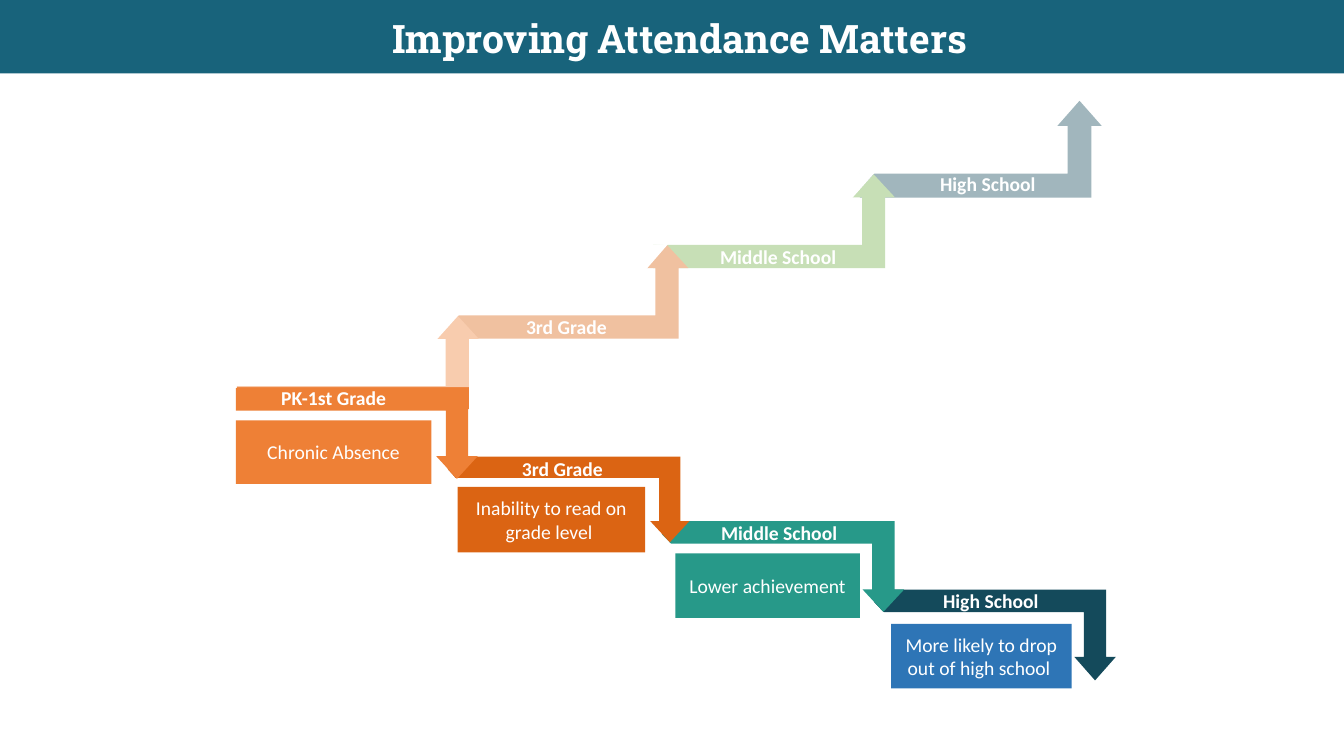
from collections import namedtuple

from lxml import etree
from pptx import Presentation
from pptx.dml.color import RGBColor
from pptx.enum.shapes import MSO_SHAPE
from pptx.enum.text import MSO_ANCHOR, MSO_AUTO_SIZE, PP_ALIGN
from pptx.oxml.ns import qn
from pptx.util import Inches, Pt

RECT = MSO_SHAPE.RECTANGLE
BENT_ARROW = MSO_SHAPE.BENT_UP_ARROW
CORNER = MSO_SHAPE.RIGHT_TRIANGLE
CENTER = PP_ALIGN.CENTER
MIDDLE = MSO_ANCHOR.MIDDLE
TOP = MSO_ANCHOR.TOP
GROW = MSO_AUTO_SIZE.SHAPE_TO_FIT_TEXT
FIXED = MSO_AUTO_SIZE.NONE

WHITE = RGBColor(0xFF, 0xFF, 0xFF)
BAND_BLUE = RGBColor(0x18, 0x63, 0x7B)
ORANGE = RGBColor(0xEE, 0x80, 0x36)
RUST = RGBColor(0xDB, 0x64, 0x13)
GREEN = RGBColor(0x73, 0xB1, 0x49)
TEAL = RGBColor(0x27, 0x99, 0x89)
NAVY = RGBColor(0x14, 0x4A, 0x5B)
BLUE = RGBColor(0x2E, 0x75, 0xB6)

# The slide is a grid of square cells, a tenth of an inch each
CELL = Inches(0.1)
COLUMNS, ROWS = 133.33, 75
ARROW_COLUMNS = 24
LABEL_COLUMNS, LABEL_ROWS = 14.4, 3.4

LABEL_FONT = {"name": "Calibri", "size": Pt(14), "bold": True}
OUTCOME_FONT = {"name": "Calibri", "size": Pt(14), "bold": False}
TITLE_FONT = {"name": "Roboto Slab", "size": Pt(28), "bold": True}

# Places are (column, row, columns, rows); cut is a white corner at the arrow tip
Step = namedtuple("Step", "grade color column row rows head label cut turn")
Outcome = namedtuple("Outcome", "text color place")

CLIMB = [
    Step("High School", NAVY, 85.3, 10, 9.6, 0.26, (90.8, 16.6), None, 0),
    Step("Middle School", GREEN, 64.8, 17.3, 9.3, 0.247, (70, 23.8),
         (83.6, 17.1, 3.3, 3.5), 85),
    Step("3rd Grade", RUST, 44.3, 24.3, 9.3, 0.248, (49, 30.8),
         (63.4, 24.3, 3, 3), 86),
    # This step shares its label with the first step down
    Step("", ORANGE, 23.5, 31.3, 9.3, 0.25, None, (42.8, 31.3, 3, 2.6), 91),
]
HIGH_DOWN, MIDDLE_DOWN, THIRD_DOWN, FIRST_DOWN = DESCENT = [
    (Step("High School", NAVY, 86.7, 58.5, 9, 0.26, (91.1, 57.9), None, 0),
     Outcome("More likely to drop out of high school ", BLUE,
             (88.4, 61.9, 17.9, 6.4))),
    (Step("Middle School", TEAL, 65.7, 51.7, 9, 0.247, (70.1, 51.2),
          (85.4, 58.3, 3.2, 3.5), 359),
     Outcome("Lower achievement", TEAL, (67, 54.9, 18.3, 6.4))),
    (Step("3rd Grade", RUST, 44.4, 45.3, 8.5, 0.248, (48.6, 44.8),
          (64.1, 51.5, 2.9, 2.8), 2),
     Outcome("Inability to read on grade level ", RUST,
             (45.4, 48.3, 18.6, 6.5))),
    (Step("PK-1st Grade", ORANGE, 23.4, 38.5, 9, 0.25, (25.9, 37.8),
          (42.9, 45.2, 2.9, 2.6), 6.4),
     Outcome("Chronic Absence", ORANGE, (23.4, 41.7, 19.4, 6.3))),
]


def on_grid(place):
    return [round(CELL * cells) for cells in place]


def add_block(shapes, kind, place, color, opacity=None):
    block = shapes.add_shape(kind, *on_grid(place))
    block.shadow.inherit = False
    block.fill.solid()
    block.fill.fore_color.rgb = color
    block.line.fill.background()
    if opacity is not None:
        tint = block.fill._xPr.find(qn("a:solidFill"))[0]
        etree.SubElement(tint, qn("a:alpha"), val=str(opacity * 1000))
    return block


def write(holder, text, font_format, anchor, auto_size):
    frame = holder.text_frame
    frame_format = {"word_wrap": True, "auto_size": auto_size,
                    "vertical_anchor": anchor}
    for key, value in frame_format.items():
        setattr(frame, key, value)
    paragraph = frame.paragraphs[0]
    paragraph.alignment = CENTER
    run = paragraph.add_run()
    run.text = text
    for key, value in font_format.items():
        setattr(run.font, key, value)
    run.font.color.rgb = WHITE


def add_text(shapes, place, text, font_format):
    write(shapes.add_textbox(*on_grid(place)), text, font_format, TOP, GROW)


def add_arrow(shapes, step, downward=False):
    place = (step.column, step.row, ARROW_COLUMNS, step.rows)
    arrow = add_block(shapes, BENT_ARROW, place, step.color)
    for index, share in enumerate((0.247, 0.229, step.head)):
        arrow.adjustments[index] = share
    if downward:
        arrow.rotation = 180
        arrow._element.spPr.xfrm.set("flipH", "1")


def add_cut(shapes, step):
    if step.cut:
        add_block(shapes, CORNER, step.cut, WHITE).rotation = step.turn


def add_label(shapes, step):
    if step.label:
        place = (*step.label, LABEL_COLUMNS, LABEL_ROWS)
        add_text(shapes, place, step.grade, LABEL_FONT)


def add_step_down(slide, step, outcome):
    shapes = slide.shapes.add_group_shape().shapes
    add_cut(shapes, step)
    add_arrow(shapes, step, downward=True)
    box = add_block(shapes, RECT, outcome.place, outcome.color)
    write(box, outcome.text, OUTCOME_FONT, MIDDLE, FIXED)
    add_label(shapes, step)


def add_climb(slide):
    shapes = slide.shapes.add_group_shape().shapes
    for add_part in (add_arrow, add_cut, add_label):
        for step in CLIMB:
            add_part(shapes, step)


def main():
    deck = Presentation()
    deck.slide_width, deck.slide_height = on_grid((COLUMNS, ROWS))
    slide = deck.slides.add_slide(deck.slide_layouts[6])

    # Title band
    add_block(slide.shapes, RECT, (0, 0, COLUMNS, 7.3), BAND_BLUE)

    # Later steps lie behind; the first step down covers the foot of the climb
    for step, outcome in (HIGH_DOWN, MIDDLE_DOWN, THIRD_DOWN):
        add_step_down(slide, step, outcome)
    add_climb(slide)
    add_step_down(slide, *FIRST_DOWN)

    # Veil that fades the climb
    add_block(slide.shapes, RECT, (20.8, 8.4, 94.4, 30), WHITE, opacity=60)

    add_text(slide.shapes, (35.3, 0.9, 64.2, 5.7),
             "Improving Attendance Matters", TITLE_FONT)
    deck.save("out.pptx")


if __name__ == "__main__":
    main()
